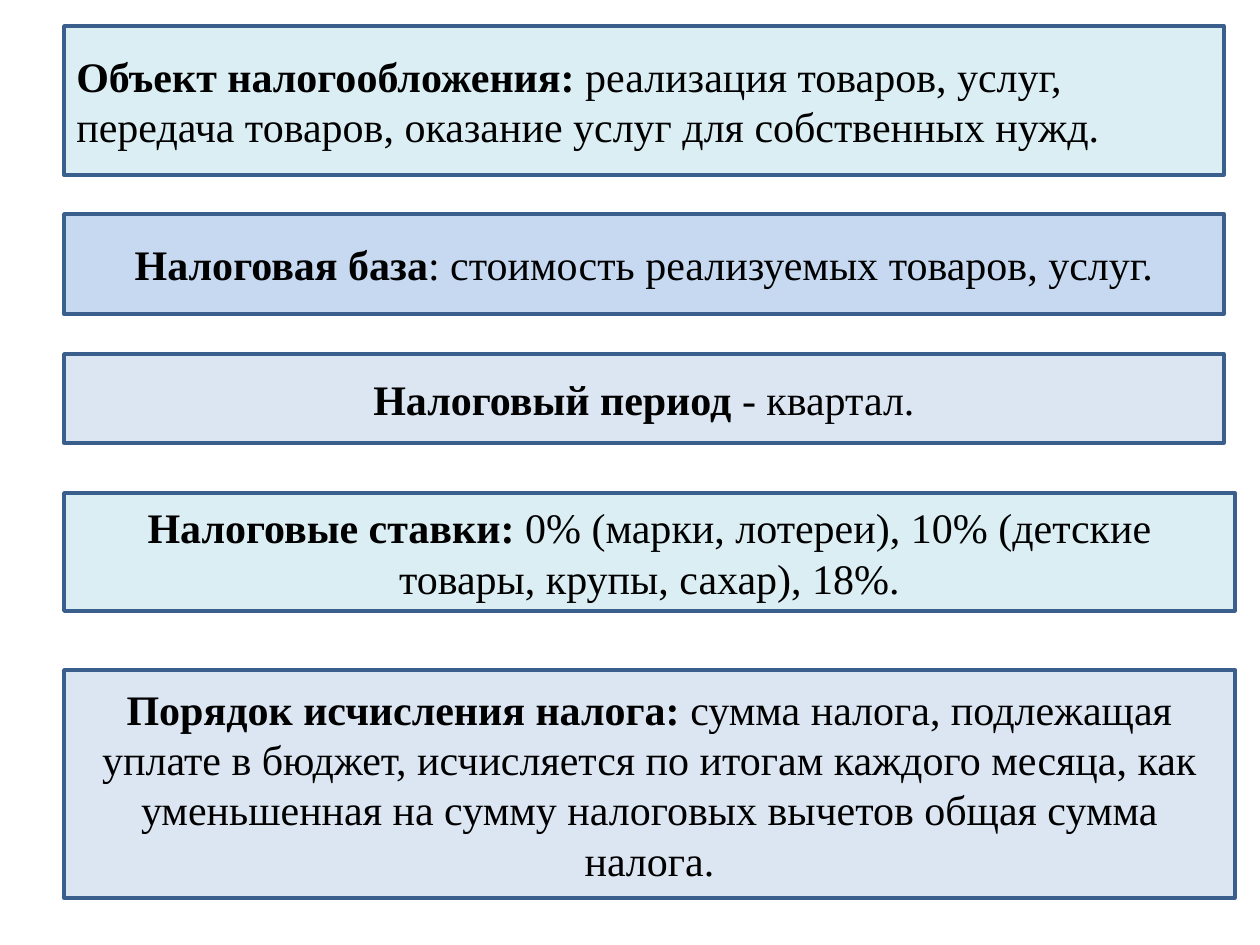
from dataclasses import dataclass

import pptx
import pptx.dml.color
import pptx.enum.shapes
import pptx.enum.text
import pptx.util

EMU_PER_PX = 914400 / 126
LEFT = 64
NARROW, WIDE = 1160, 1171
AQUA, BLUE, PALE_BLUE = "DBEEF4", "C6D9F1", "DCE6F2"
BORDER, BLACK = "3A5F8C", "000000"
LEFT_ALIGN = pptx.enum.text.PP_ALIGN.LEFT
CENTER = pptx.enum.text.PP_ALIGN.CENTER


@dataclass
class TaxElement:
    top: int
    width: int
    height: int
    fill: str
    term: str
    description: str
    alignment: pptx.enum.text.PP_ALIGN = CENTER


TAX_ELEMENTS = [
    TaxElement(26, NARROW, 149, AQUA, "Объект налогообложения: ",
               "реализация товаров, услуг, передача товаров, "
               "оказание услуг для собственных нужд.", LEFT_ALIGN),
    TaxElement(214, NARROW, 100, BLUE, "Налоговая база",
               ": стоимость реализуемых товаров, услуг."),
    TaxElement(354, NARROW, 89, PALE_BLUE, "Налоговый период ", "- квартал."),
    TaxElement(493, WIDE, 118, AQUA, "Налоговые ставки: ",
               "0% (марки, лотереи), 10% (детские товары, крупы, сахар), 18%."),
    TaxElement(670, WIDE, 228, PALE_BLUE, "Порядок исчисления налога: ",
               "сумма налога, подлежащая уплате в бюджет, исчисляется по итогам "
               "каждого месяца, как уменьшенная на сумму налоговых вычетов "
               "общая сумма налога."),
]


def px(length: int) -> pptx.util.Emu:
    return pptx.util.Emu(round(length * EMU_PER_PX))


def color(hex_value: str) -> pptx.dml.color.RGBColor:
    return pptx.dml.color.RGBColor.from_string(hex_value)


def draw_tax_element(slide: pptx.slide.Slide, element: TaxElement) -> None:
    shape = slide.shapes.add_shape(
        pptx.enum.shapes.MSO_SHAPE.RECTANGLE,
        px(LEFT), px(element.top), px(element.width), px(element.height))
    shape.shadow.inherit = False
    shape.fill.solid()
    shape.fill.fore_color.rgb = color(element.fill)
    shape.line.color.rgb = color(BORDER)
    shape.line.width = pptx.util.Pt(2)

    frame = shape.text_frame
    frame.word_wrap = True
    frame.vertical_anchor = pptx.enum.text.MSO_ANCHOR.MIDDLE
    paragraph = frame.paragraphs[0]
    paragraph.alignment = element.alignment
    paragraph.font.name = "Times New Roman"
    paragraph.font.size = pptx.util.Pt(24)
    paragraph.font.color.rgb = color(BLACK)
    for text, bold in ((element.term, True), (element.description, False)):
        run = paragraph.add_run()
        run.text = text
        run.font.bold = bold


def main() -> None:
    presentation = pptx.Presentation()
    presentation.slide_width = px(1260)
    presentation.slide_height = px(945)
    slide = presentation.slides.add_slide(presentation.slide_layouts[6])
    for element in TAX_ELEMENTS:
        draw_tax_element(slide, element)
    presentation.save("out.pptx")


if __name__ == "__main__":
    main()
